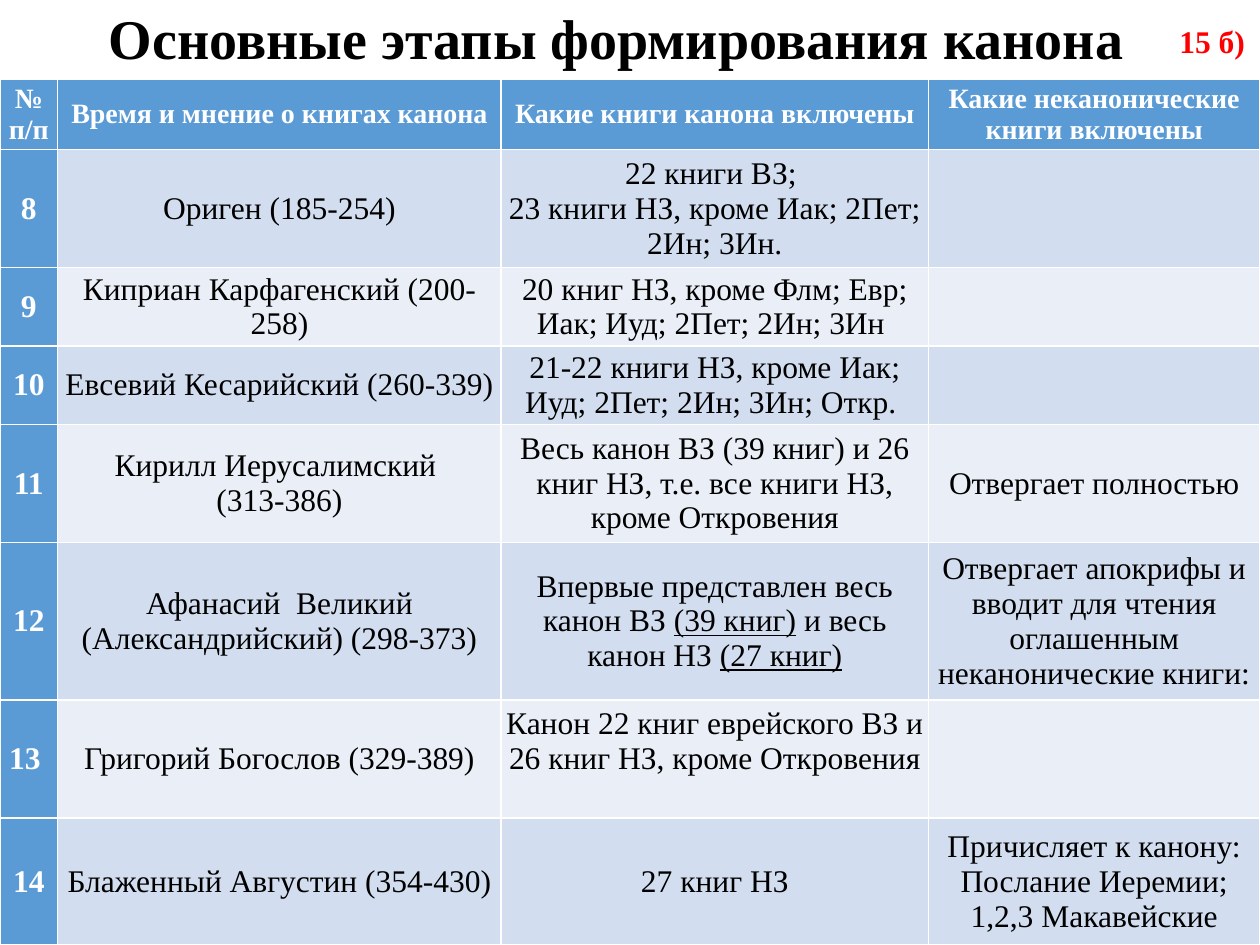
from pptx import Presentation
from pptx.dml.color import RGBColor
from pptx.enum.text import MSO_ANCHOR, PP_ALIGN
from pptx.util import Pt

FONT = "Times New Roman"
COLORS = {
    "black": "000000",
    "white": "FFFFFF",
    "red": "FF0000",
    "header": "5B9BD5",
    "odd": "D2DEEF",
    "even": "EAEFF7",
}
COLUMN_WIDTHS = [33, 253.4, 244.2, 189.4]
ROW_HEIGHTS = [40, 67.5, 44.8, 44.8, 67.5, 90, 67.5, 72.5]
TRAILING_GAP = 20.7  # one line of body text left free under the entry of row 13

# "\n" starts a paragraph, "\v" breaks a line, "_" encloses underlined words
ROWS = [
    ["№\vп/п", "Время и мнение о книгах канона", "Какие книги канона включены",
     "Какие неканонические книги включены"],
    ["8", "Ориген (185-254)",
     "22 книги ВЗ; \n23 книги НЗ, кроме Иак; 2Пет; 2Ин; 3Ин.", ""],
    ["9", "Киприан Карфагенский (200-258)",
     "20 книг НЗ, кроме Флм; Евр; Иак; Иуд; 2Пет; 2Ин; 3Ин ", ""],
    ["10", "Евсевий Кесарийский (260-339)",
     "21-22 книги НЗ, кроме Иак; Иуд; 2Пет; 2Ин; 3Ин; Откр. ", ""],
    ["11", "Кирилл Иерусалимский \v(313-386)",
     "Весь канон ВЗ (39 книг) и 26 книг НЗ, т.е. все книги НЗ, кроме Откровения",
     "Отвергает полностью"],
    ["12", "Афанасий  Великий (Александрийский) (298-373)",
     "Впервые представлен весь канон ВЗ _(39 книг)_ и весь канон НЗ _(27 книг)_",
     "Отвергает апокрифы и вводит для чтения оглашенным неканонические книги:"],
    ["13 ", "Григорий Богослов (329-389)",
     "Канон 22 книг еврейского ВЗ и\n26 книг НЗ, кроме Откровения", ""],
    ["14", "Блаженный Августин (354-430)", "27 книг НЗ",
     "Причисляет к канону:\nПослание Иеремии; 1,2,3 Макавейские"],
]


def place(shape, left, top, width, height):
    shape.left, shape.top = Pt(left), Pt(top)
    shape.width, shape.height = Pt(width), Pt(height)


def format_text(text_frame, size, color, bold, alignment=PP_ALIGN.CENTER):
    for paragraph in text_frame.paragraphs:
        paragraph.alignment = alignment
        for run in paragraph.runs:
            run.font.name = FONT
            run.font.size = Pt(size)
            run.font.bold = bold
            run.font.color.rgb = RGBColor.from_string(COLORS[color])


def add_title(slide, left, top, width, height):
    title = slide.shapes.title
    place(title, left, top, width, height)
    text_frame = title.text_frame
    text_frame.text = "Основные этапы формирования канона"
    text_frame.vertical_anchor = MSO_ANCHOR.MIDDLE
    text_frame.paragraphs[0].line_spacing = 0.9
    format_text(text_frame, 32, "black", True)


def add_page_mark(slide, left, top, width, height):
    box = slide.shapes.add_textbox(Pt(left), Pt(top), Pt(width), Pt(height))
    text_frame = box.text_frame
    text_frame.word_wrap = True
    text_frame.vertical_anchor = MSO_ANCHOR.MIDDLE
    text_frame.text = "15 б)"
    format_text(text_frame, 18, "red", True, PP_ALIGN.RIGHT)


def write_underlined(paragraph, text):
    """Write text whose parts between underscores are underlined."""
    for index, part in enumerate(text.split("_")):
        if part:
            run = paragraph.add_run()
            run.text = part
            run.font.underline = index % 2 == 1


def fill_cell(cell, text, row, column):
    is_heading = row == 0 or column == 0
    band = "header" if is_heading else "odd" if row % 2 else "even"
    cell.fill.solid()
    cell.fill.fore_color.rgb = RGBColor.from_string(COLORS[band])
    if not text:
        return
    cell.vertical_anchor = MSO_ANCHOR.MIDDLE
    cell.margin_left = cell.margin_right = Pt(0.5)
    cell.margin_top = cell.margin_bottom = Pt(0)
    if "_" in text:
        write_underlined(cell.text_frame.paragraphs[0], text)
    else:
        cell.text_frame.text = text
    format_text(cell.text_frame, 16 if row == 0 else 18,
                "white" if is_heading else "black", is_heading)


def add_canon_table(slide, left, top):
    frame = slide.shapes.add_table(
        len(ROW_HEIGHTS), len(COLUMN_WIDTHS), Pt(left), Pt(top),
        Pt(sum(COLUMN_WIDTHS)), Pt(sum(ROW_HEIGHTS)))
    table = frame.table
    table.first_col = True
    for column, width in zip(table.columns, COLUMN_WIDTHS):
        column.width = Pt(width)
    for row, height in zip(table.rows, ROW_HEIGHTS):
        row.height = Pt(height)
    for row, texts in enumerate(ROWS):
        for column, text in enumerate(texts):
            fill_cell(table.cell(row, column), text, row, column)
    table.cell(6, 2).margin_bottom = Pt(TRAILING_GAP)


def main():
    presentation = Presentation()
    presentation.slide_width, presentation.slide_height = Pt(720), Pt(540)
    slide = presentation.slides.add_slide(presentation.slide_layouts[5])
    add_title(slide, 42, 2, 620.5, 43)
    add_canon_table(slide, 0, 45.4)
    add_page_mark(slide, 663, 8, 55.5, 31)
    presentation.save("out.pptx")


if __name__ == "__main__":
    main()
